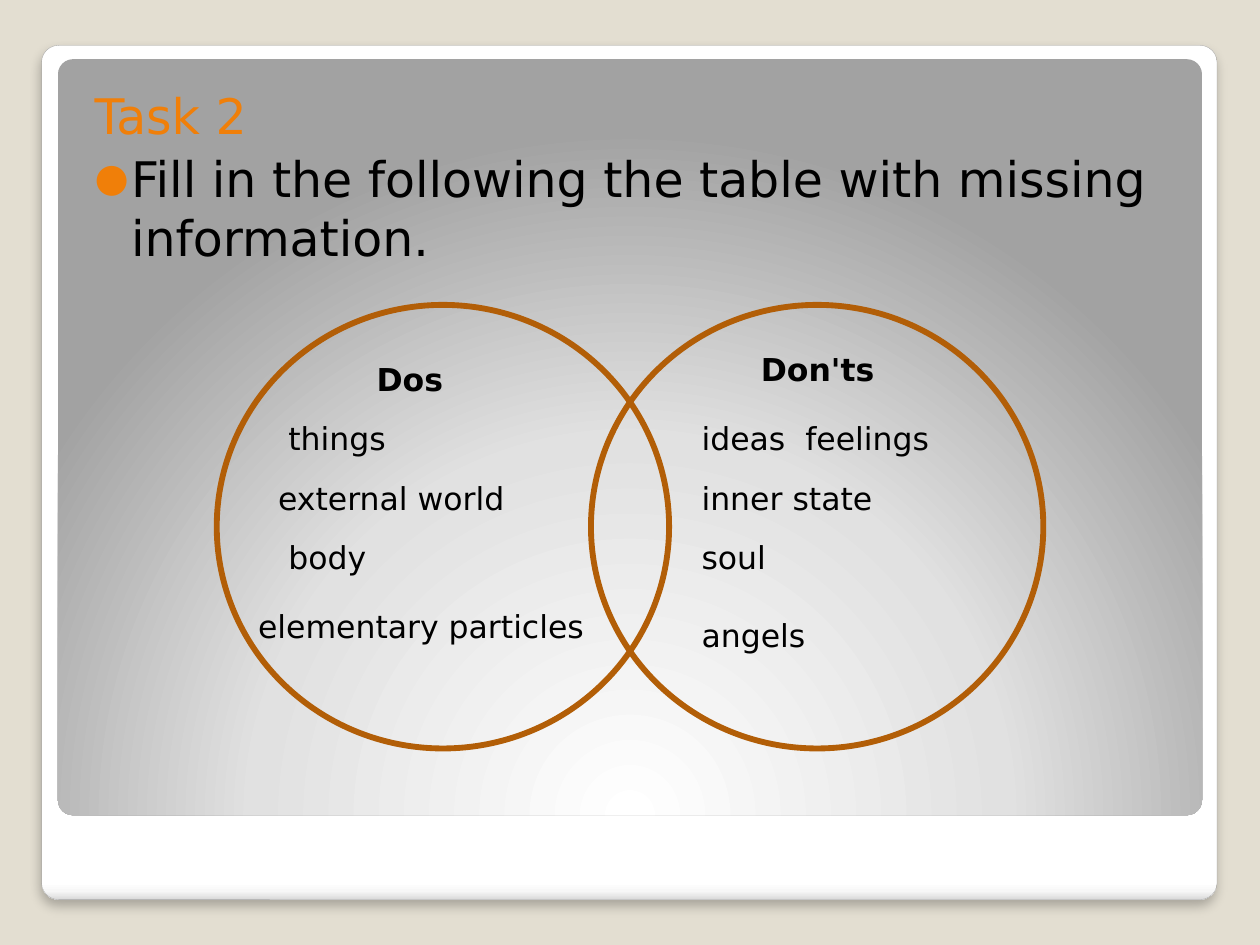
import pptx
import pptx.util
import pptx.dml.color
import pptx.enum.shapes
import pptx.enum.text
import pptx.oxml
import pptx.oxml.ns
from pptx.util import Inches, Pt

THEME = {
    "font": "DejaVu Sans", "heading": 28, "label": 18,
    "background": "E3DED1", "accent": "F07F09", "text": "000000",
    "ring": "B25E07", "edge": "A4A4A4",
    "card": [(0, "FFFFFF"), (98, "FFFFFF"), (99, "F7F7F7"), (100, "DADADA")],
    "panel": [(0, "FFFFFF"), (55, "E1E1E1"), (100, "A2A2A2")],
}
TITLE = "Task 2"
INSTRUCTION = "Fill in the following the table with missing information."

# Each circle: left edge, then labels as (text, left, top, width, bold)
ROWS = [3.28 + 0.47 * step for step in range(3)]
CIRCLES = [
    (1.72, [
        ("Dos", 2.89, 2.81, 1.17, True),
        ("things", 2.19, ROWS[0], 1.64, False),
        ("external world", 2.11, ROWS[1], 2.27, False),
        ("body", 2.19, ROWS[2], 1.64, False),
        ("elementary particles", 1.95, 4.77, 2.89, False),
    ]),
    (4.69, [
        ("Don'ts", 5.94, 2.73, 1.17, True),
        ("ideas  feelings", 5.47, ROWS[0], 2.19, False),
        ("inner state", 5.47, ROWS[1], 1.64, False),
        ("soul", 5.47, ROWS[2], 1.64, False),
        ("angels", 5.47, 4.84, 1.64, False),
    ]),
]
CIRCLE_TOP, CIRCLE_SIZE = 2.42, (3.59, 3.52)
LINEAR = '<a:lin ang="5400000" scaled="0"/>'
RADIAL = ('<a:path path="circle"><a:fillToRect l="50000" t="175000" '
          'r="50000" b="-75000"/></a:path>')
SHADOW = ('<a:outerShdw {ns} blurRad="76200" dist="50800" dir="5400000" algn="tl" '
          'rotWithShape="0"><a:srgbClr val="000000"><a:alpha val="25000"/>'
          '</a:srgbClr></a:outerShdw>')


def color(name):
    return pptx.dml.color.RGBColor.from_string(THEME[name])


def element(xml):
    return pptx.oxml.parse_xml(xml.replace("{ns}", pptx.oxml.ns.nsdecls("a")))


def add_plain_shape(page, kind, left, top, width, height):
    shape = page.shapes.add_shape(kind, Inches(left), Inches(top), Inches(width), Inches(height))
    shape.shadow.inherit = False
    shape.fill.background()
    shape.line.fill.background()
    return shape


def add_frame(page, area, stops, direction):
    """Rounded rectangle with a gradient; direction is its DrawingML element."""
    frame = add_plain_shape(page, pptx.enum.shapes.MSO_SHAPE.ROUNDED_RECTANGLE, *area)
    frame.adjustments[0] = 0.02
    marks = "".join(f'<a:gs pos="{share * 1000}"><a:srgbClr val="{value}"/></a:gs>'
                    for share, value in stops)
    gradient = element(f'<a:gradFill {{ns}} rotWithShape="1"><a:gsLst>{marks}</a:gsLst>'
                       f'{direction}</a:gradFill>')
    properties = frame._element.spPr
    properties.replace(properties.find(pptx.oxml.ns.qn("a:noFill")), gradient)
    return frame


def add_text_box(page, left, top, width, height):
    box = page.shapes.add_textbox(Inches(left), Inches(top), Inches(width), Inches(height))
    box.text_frame.word_wrap = True
    return box


def add_span(para, text, size, tint, bold=False):
    span = para.add_run()
    span.text = text
    span.font.name = THEME["font"]
    span.font.size = Pt(THEME[size])
    span.font.bold = bold
    span.font.color.rgb = color(tint)


def format_hanging(para, bulleted):
    para.space_before = Pt(2.5)
    properties = para._p.get_or_add_pPr()
    properties.set("marL", str(Inches(0.29)))
    properties.set("indent", str(-Inches(0.29)))
    if bulleted:
        for xml in (f'<a:buClr {{ns}}><a:srgbClr val="{THEME["accent"]}"/></a:buClr>',
                    '<a:buSzPct {ns} val="80000"/>',
                    f'<a:buFont {{ns}} typeface="{THEME["font"]}"/>',
                    '<a:buChar {ns} char="●"/>'):
            properties.append(element(xml))


def add_heading(page):
    frame = add_text_box(page, 0.55, 0.58, 8.95, 1.7).text_frame
    frame.margin_left, frame.margin_top = Inches(0.2), Inches(0.1)
    frame.margin_right, frame.margin_bottom = Inches(0.1), Inches(0.05)
    title, instruction = frame.paragraphs[0], frame.add_paragraph()
    format_hanging(title, False)
    add_span(title, TITLE, "heading", "accent")
    format_hanging(instruction, True)
    add_span(instruction, INSTRUCTION, "heading", "text")


def main():
    deck = pptx.Presentation()
    deck.slide_width, deck.slide_height = Inches(10), Inches(7.5)
    page = deck.slides.add_slide(deck.slide_layouts[6])
    page.background.fill.solid()
    page.background.fill.fore_color.rgb = color("background")

    card = add_frame(page, (0.33, 0.36, 9.33, 6.78), THEME["card"], LINEAR)
    card.line.color.rgb = color("edge")
    card.line.width = Pt(0.16)
    card._element.spPr.find(pptx.oxml.ns.qn("a:effectLst")).append(element(SHADOW))
    add_frame(page, (0.46, 0.47, 9.08, 6), THEME["panel"], RADIAL)
    add_heading(page)

    for left, _ in CIRCLES:
        circle = add_plain_shape(page, pptx.enum.shapes.MSO_SHAPE.OVAL,
                                 left, CIRCLE_TOP, *CIRCLE_SIZE)
        circle.line.color.rgb = color("ring")
        circle.line.width = Pt(3.35)
    for _, labels in CIRCLES:
        for text, left, top, width, bold in labels:
            box = add_text_box(page, left, top, width, 0.4)
            box.text_frame.auto_size = pptx.enum.text.MSO_AUTO_SIZE.SHAPE_TO_FIT_TEXT
            add_span(box.text_frame.paragraphs[0], text, "label", "text", bold)

    deck.save("out.pptx")


if __name__ == "__main__":
    main()
